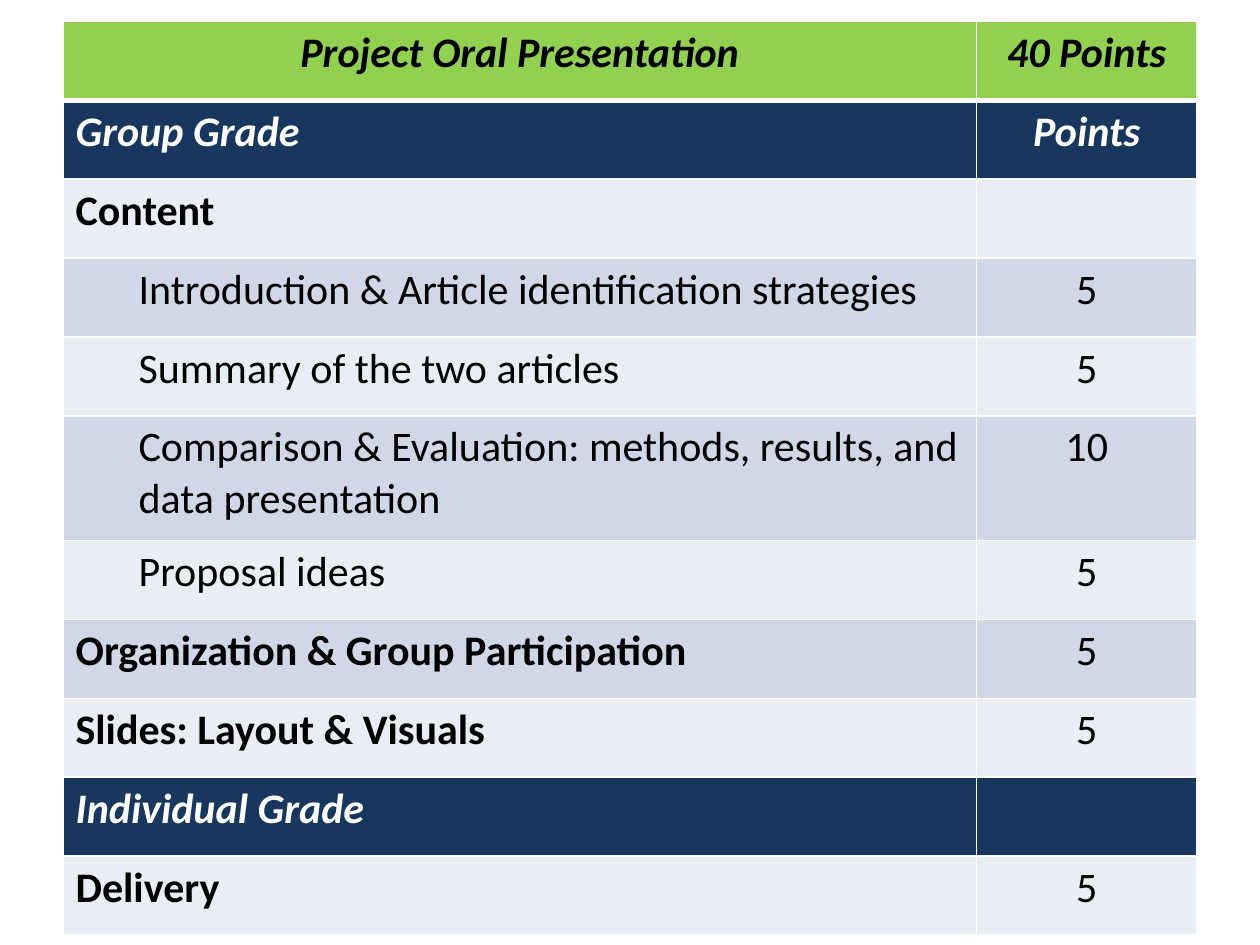
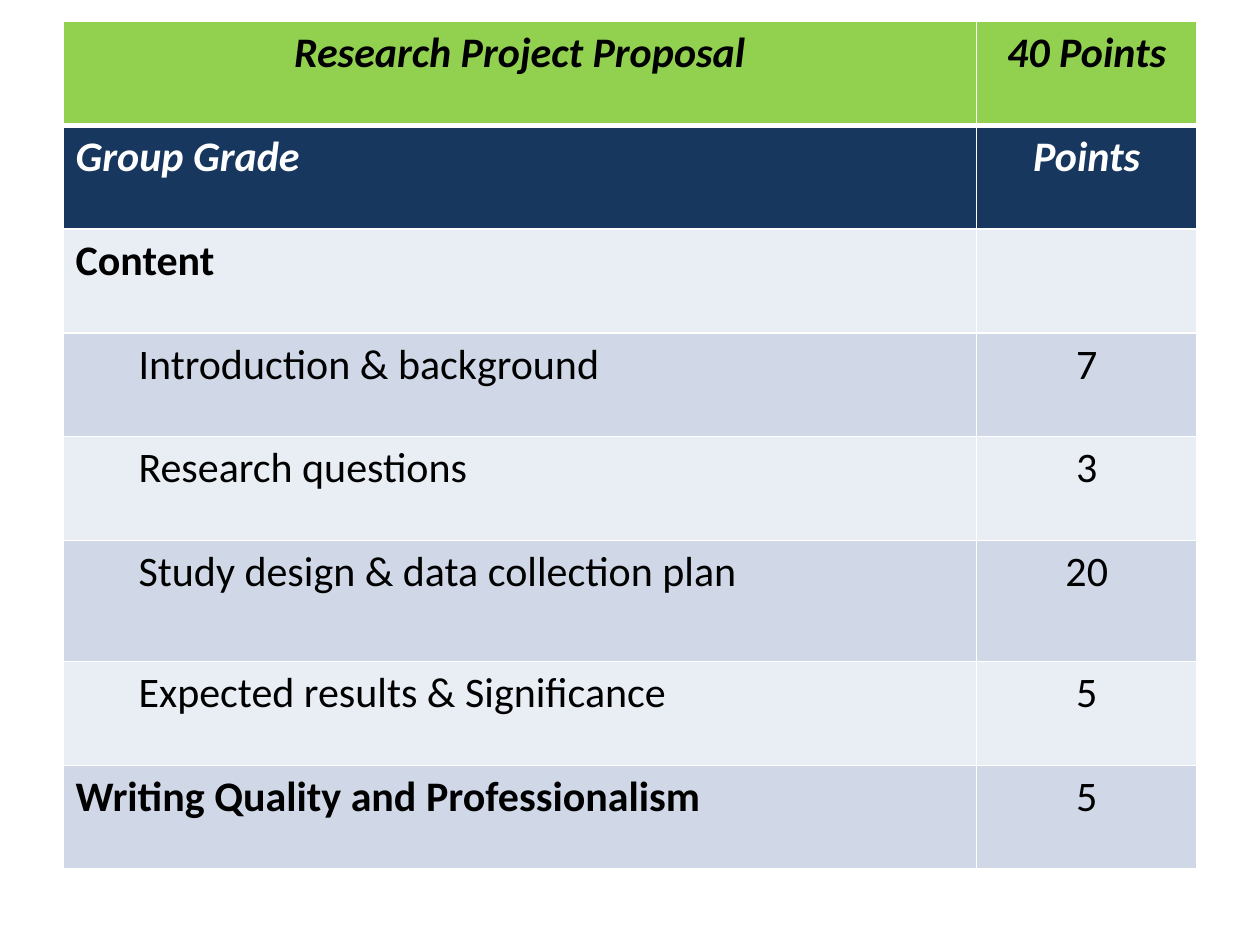
from lxml import etree
from pptx import Presentation
from pptx.dml.color import RGBColor
from pptx.enum.text import PP_ALIGN
from pptx.oxml.ns import qn
from pptx.util import Inches, Pt

CENTER, LEFT = PP_ALIGN.CENTER, PP_ALIGN.LEFT

RUBRICS = [
    {
        "height": 7.25,
        "tall_row": (5, 0.99),
        "rows": [
            ("title", "Project Oral Presentation", "40 Points"),
            ("section", "Group Grade", "Points"),
            ("criterion", "Content", ""),
            ("detail", "Introduction & Article identification strategies", "5"),
            ("detail", "Summary of the two articles", "5"),
            ("detail", "Comparison & Evaluation: methods, results, and data presentation", "10"),
            ("detail", "Proposal ideas", "5"),
            ("criterion", "Organization & Group Participation", "5"),
            ("criterion", "Slides: Layout & Visuals", "5"),
            ("section", "Individual Grade", ""),
            ("criterion", "Delivery", "5"),
        ],
    },
    {
        "height": 6.73,
        "tall_row": (5, 0.96),
        "rows": [
            ("title", "Research Project Proposal", "40 Points"),
            ("section", "Group Grade", "Points"),
            ("criterion", "Content", ""),
            ("detail", "Introduction & background", "7"),
            ("detail", "Research questions", "3"),
            ("detail", "Study design & data collection plan", "20"),
            ("detail", "Expected results & Significance", "5"),
            ("criterion", "Writing Quality and Professionalism", "5"),
        ],
    },
]

LEFT_EDGE, TOP_EDGE = 0.5, 0.17
COLUMN_WIDTHS = (7.25, 1.75)
DETAIL_INDENT = 0.5
BORDER_COLOR = "FFFFFF"
BAND_FILLS = ("E9EDF4", "D0D8E8")
HEADING_FILLS = {"title": "92D050", "section": "17375E"}
BASE_FONT = {"name": "Calibri", "size": Pt(24)}
LABEL_FONTS = {
    "title": {"bold": True, "italic": True},
    "section": {"bold": True, "italic": True},
    "criterion": {"bold": True, "italic": False},
    "detail": {"bold": False, "italic": False},
}


def rgb(value):
    return RGBColor.from_string(value)


def add_borders(cell, row_index):
    properties = cell._tc.get_or_add_tcPr()
    widths = {
        "lnL": 1,
        "lnR": 1,
        "lnT": 3 if row_index == 1 else 1,
        "lnB": 3 if row_index == 0 else 1,
    }
    for side, width in widths.items():
        line = etree.SubElement(properties, qn(f"a:{side}"), w=str(Pt(width)))
        solid = etree.SubElement(line, qn("a:solidFill"))
        etree.SubElement(solid, qn("a:srgbClr"), val=BORDER_COLOR)


def write_text(cell, text, role, is_points):
    paragraph = cell.text_frame.paragraphs[0]
    paragraph.alignment = CENTER if is_points or role == "title" else LEFT
    if role == "detail" and not is_points:
        paragraph.level = 1
        indents = paragraph._p.get_or_add_pPr()
        indents.set("marL", str(Inches(DETAIL_INDENT)))
        indents.set("indent", "0")
    run = paragraph.add_run()
    run.text = text
    plain_points = is_points and role == "criterion"
    weight = LABEL_FONTS["detail" if plain_points else role]
    for name, value in {**BASE_FONT, **weight}.items():
        setattr(run.font, name, value)
    run.font.color.rgb = rgb("FFFFFF" if role == "section" else "000000")


def add_rubric(slide, rubric):
    rows = rubric["rows"]
    tall_index, tall_height = rubric["tall_row"]
    row_height = (rubric["height"] - tall_height) / (len(rows) - 1)
    table = slide.shapes.add_table(
        len(rows), len(COLUMN_WIDTHS), Inches(LEFT_EDGE), Inches(TOP_EDGE),
        Inches(sum(COLUMN_WIDTHS)), Inches(rubric["height"]),
    ).table
    for column, width in zip(table.columns, COLUMN_WIDTHS):
        column.width = Inches(width)
    for row_index, (role, *texts) in enumerate(rows):
        height = tall_height if row_index == tall_index else row_height
        table.rows[row_index].height = Inches(height)
        fill = HEADING_FILLS.get(role, BAND_FILLS[row_index % 2])
        for column_index, text in enumerate(texts):
            cell = table.cell(row_index, column_index)
            add_borders(cell, row_index)
            cell.fill.solid()
            cell.fill.fore_color.rgb = rgb(fill)
            if text:
                write_text(cell, text, role, column_index == 1)


def main():
    deck = Presentation()
    deck.slide_width, deck.slide_height = Inches(10), Inches(7.5)
    blank_layout = deck.slide_layouts[6]
    for rubric in RUBRICS:
        add_rubric(deck.slides.add_slide(blank_layout), rubric)
    deck.save("out.pptx")


if __name__ == "__main__":
    main()
